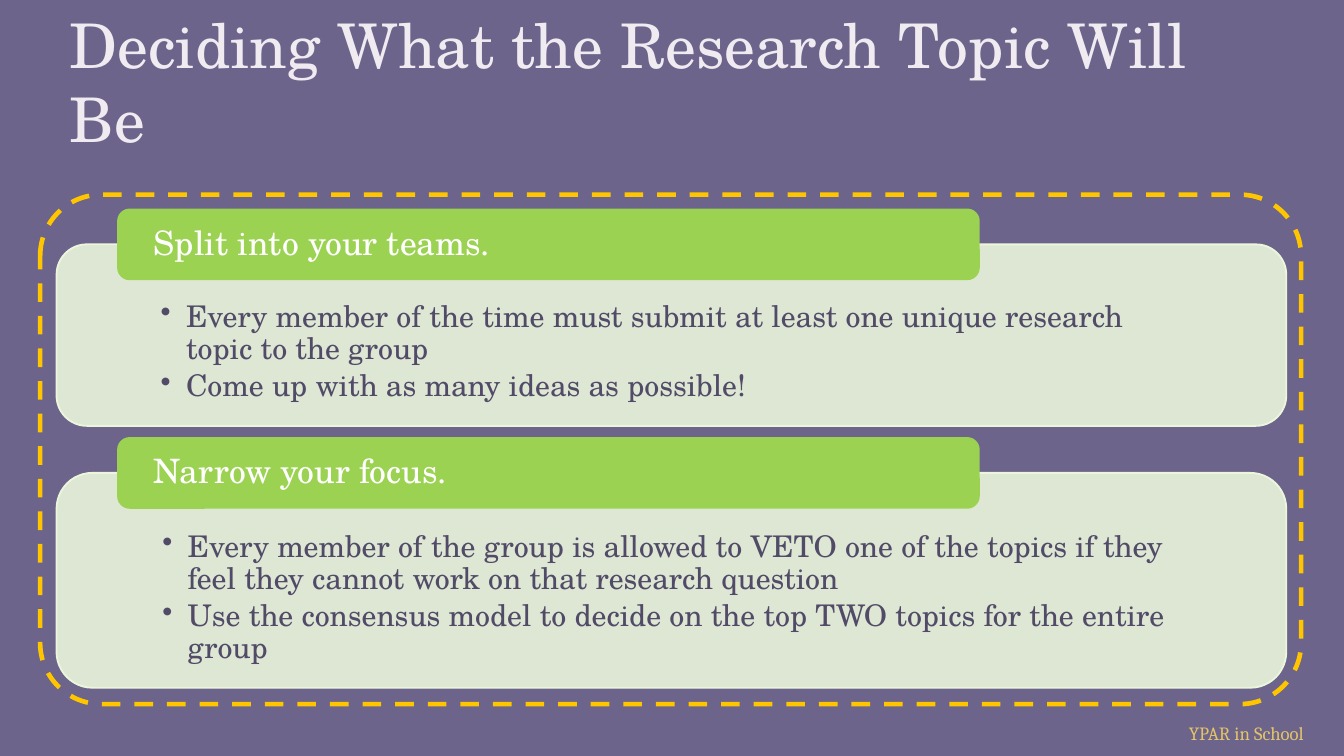
from lxml import etree
from pptx import Presentation
from pptx.dml.color import RGBColor
from pptx.enum.dml import MSO_LINE
from pptx.enum.shapes import MSO_SHAPE
from pptx.enum.text import MSO_ANCHOR, PP_ALIGN
from pptx.oxml.ns import qn
from pptx.util import Cm, Pt

ROUND = MSO_SHAPE.ROUNDED_RECTANGLE
DASH = MSO_LINE.DASH
TOP, MIDDLE, BOTTOM = MSO_ANCHOR.TOP, MSO_ANCHOR.MIDDLE, MSO_ANCHOR.BOTTOM
LEFT = PP_ALIGN.LEFT

COLORS = {
    "background": "6C648B",
    "title": "F0EBF0",
    "panel": "EBF6DC",
    "header": "9BD252",
    "body": "514B68",
    "white": "FFFFFF",
    "frame": "FFC600",
    "footer": "E4C469",
}
FONT = "TeX Gyre Schola"

STEPS = [
    (4.62, 3.43, "Split into your teams.", [
        "Every member of the time must submit at least one unique research topic to the group",
        "Come up with as many ideas as possible!",
    ]),
    (8.94, 4.06, "Narrow your focus.", [
        "Every member of the group is allowed to VETO one of the topics if they "
        "feel they cannot work on that research question",
        "Use the consensus model to decide on the top TWO topics for the entire group",
    ]),
]


def rgb(name):
    return RGBColor.from_string(COLORS[name])


def add_bullet(p):
    pPr = p._p.get_or_add_pPr()
    pPr.set("marL", str(Cm(0.48)))
    pPr.set("indent", str(Cm(-0.48)))
    etree.SubElement(pPr, qn("a:buChar")).set("char", "•")


def write(sp, lines, size, color, font=FONT, anchor=TOP, insets=(0.25, 0.25, 0.25, 0.25),
          bullet=False, spacing=1.0, after=0, wrap=True):
    tf = sp.text_frame
    tf.word_wrap = wrap
    tf.vertical_anchor = anchor
    tf.margin_left, tf.margin_top, tf.margin_right, tf.margin_bottom = map(Cm, insets)
    for i, text in enumerate(lines):
        p = tf.add_paragraph() if i else tf.paragraphs[0]
        if bullet:
            add_bullet(p)
        p.alignment = LEFT
        p.line_spacing = spacing
        p.space_after = Pt(after)
        r = p.add_run()
        r.text = text
        r.font.name = font
        r.font.size = Pt(size)
        r.font.color.rgb = rgb(color)


def add_round(s, box, line, fill=None, alpha=None, width=1):
    sp = s.shapes.add_shape(ROUND, *map(Cm, box))
    sp.shadow.inherit = False
    sp.line.color.rgb = rgb(line)
    sp.line.width = Pt(width)
    if fill is None:
        sp.fill.background()
        return sp
    sp.fill.solid()
    sp.fill.fore_color.rgb = rgb(fill)
    if alpha:
        clr = sp._element.spPr.find(qn("a:solidFill")).find(qn("a:srgbClr"))
        etree.SubElement(clr, qn("a:alpha")).set("val", str(alpha * 1000))
    return sp


def add_title(s, box, text):
    sp = s.shapes.add_textbox(*map(Cm, box))
    write(sp, [text], 33, "title", anchor=BOTTOM)


def add_step(s, box, heading, bullets):
    x, y, w, h = box
    panel = add_round(s, box, "panel", "panel", alpha=90)
    write(panel, bullets, 16, "body", insets=(1.8, 0.91, 1.8, 0.3),
          bullet=True, spacing=0.9, after=2.7)
    header_h = 1.32
    header = add_round(s, (x + w * 0.05, y - header_h / 2, w * 0.7, header_h),
                       "header", "header")
    write(header, [heading], 18, "white", anchor=MIDDLE,
          insets=(0.61, 0, 0.61, 0), spacing=0.9)


def add_frame(s, box):
    sp = add_round(s, box, "frame", width=2.5)
    sp.adjustments[0] = 0.12
    sp.line.dash_style = DASH


def add_footer(s, box, text):
    sp = s.shapes.add_textbox(*map(Cm, box))
    write(sp, [text], 10, "footer", font="Cambria",
          insets=(0.25, 0.13, 0.25, 0.13), wrap=False)


def main():
    prs = Presentation()
    prs.slide_width, prs.slide_height = Cm(25.4), Cm(14.29)
    s = prs.slides.add_slide(prs.slide_layouts[6])
    s.background.fill.solid()
    s.background.fill.fore_color.rgb = rgb("background")

    left, width = 1.07, 23.24
    add_footer(s, (22.22, 13.51, 2.8, 0.69), "YPAR in School")
    for top, height, heading, bullets in STEPS:
        add_step(s, (left, top, width, height), heading, bullets)
    add_title(s, (left, 1.27, width, 1.9), "Deciding What the Research Topic Will Be")
    add_frame(s, (0.76, 3.68, 23.83, 9.63))
    prs.save("out.pptx")


if __name__ == "__main__":
    main()
